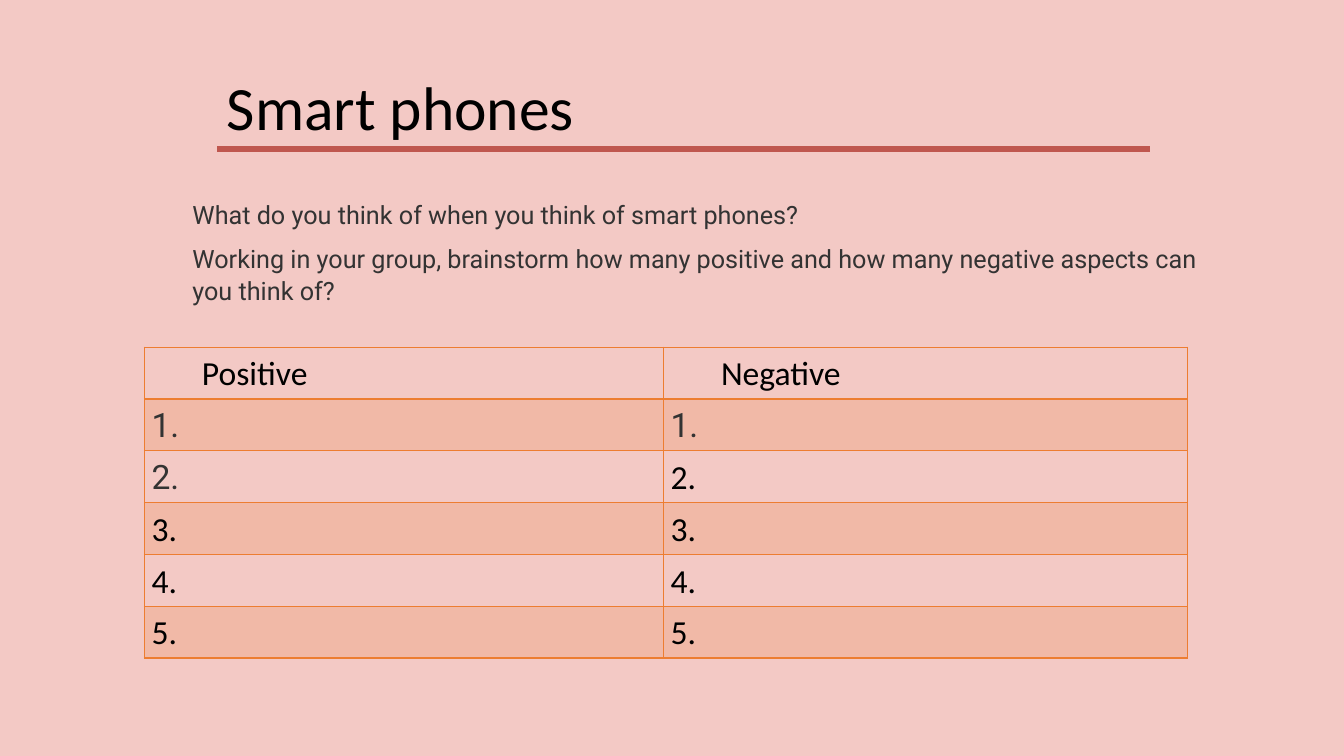
from lxml import etree
from pptx import Presentation
from pptx.dml.color import RGBColor
from pptx.enum.shapes import MSO_CONNECTOR
from pptx.enum.text import MSO_ANCHOR
from pptx.oxml.ns import qn
from pptx.util import Cm, Pt

LINE = MSO_CONNECTOR.STRAIGHT
MIDDLE = MSO_ANCHOR.MIDDLE
BLACK, GREY, ORANGE = "000000", "333333", "ED7D31"
PINK, RED = "F3C9C5", "BF574F"
SANS, BODY = "Calibri", "Roboto"


def color(code):
    return RGBColor.from_string(code)


def add_run(para, text, size, font, code):
    run = para.add_run()
    run.text = text
    run.font.size = Pt(size)
    run.font.name = font
    run.font.color.rgb = color(code)


def add_box(slide, left, top, width, height):
    box = slide.shapes.add_textbox(Cm(left), Cm(top), Cm(width), Cm(height))
    box.text_frame.word_wrap = True
    return box.text_frame


def add_title(slide, left, top, width, height):
    frame = add_box(slide, left, top, width, height)
    frame.vertical_anchor = MIDDLE
    para = frame.paragraphs[0]
    para.line_spacing = 0.9
    add_run(para, "Smart phones", 44, SANS, BLACK)

    # Rule under the title
    level = Cm(top + 2.81)
    rule = slide.shapes.add_connector(LINE, Cm(left), level,
                                      Cm(left + 23.5), level)
    rule.line.color.rgb = color(RED)
    rule.line.width = Pt(4.5)
    etree.SubElement(rule._element.spPr, qn("a:effectLst"))


def add_task(slide, left, top, width, height):
    frame = add_box(slide, left, top, width, height)
    texts = (
        "What do you think of when you think of smart phones?",
        "Working in your group, brainstorm how many positive and how many "
        "negative aspects can you think of?",
    )
    for i, text in enumerate(texts):
        para = frame.add_paragraph() if i else frame.paragraphs[0]
        para.line_spacing = 1.07
        para.space_after = Pt(8)
        add_run(para, text, 18, BODY, GREY)


def indent(para, left, first=0):
    props = para._p.get_or_add_pPr()
    props.set("marL", str(Cm(left)))
    props.set("indent", str(Cm(first)))
    return props


def add_edge(cell, side, width):
    props = cell._tc.get_or_add_tcPr()
    edge = etree.SubElement(props, qn("a:ln" + side), w=str(Pt(width)))
    fill = etree.SubElement(edge, qn("a:solidFill"))
    etree.SubElement(fill, qn("a:srgbClr"), val=ORANGE)


def fill_cell(cell, shaded):
    if not shaded:
        cell.fill.background()
        return
    cell.fill.solid()
    cell.fill.fore_color.rgb = color(ORANGE)
    tint = cell._tc.tcPr.find(qn("a:solidFill"))[0]
    etree.SubElement(tint, qn("a:alpha"), val="20000")


def add_grid(slide, left, top, width, height):
    heads = ("Positive", "Negative")
    count = 5
    grey = {(1, 0), (2, 0), (1, 1)}
    grid = slide.shapes.add_table(count + 1, len(heads), Cm(left), Cm(top),
                                  Cm(width), Cm(height)).table
    grid.first_row = grid.horz_banding = False
    first = 13.08
    for col, size in zip(grid.columns, (first, width - first)):
        col.width = Cm(size)

    for r, row in enumerate(grid.rows):
        row.height = Cm(height / (count + 1))
        for c, cell in enumerate(row.cells):
            cell.vertical_anchor = MIDDLE
            cell.margin_left = cell.margin_right = Cm(0.18)
            cell.margin_top = cell.margin_bottom = 0
            para = cell.text_frame.paragraphs[0]
            para.line_spacing = 1.07
            font, code = (BODY, GREY) if (r, c) in grey else (SANS, BLACK)
            if r == 0:
                indent(para, 1.27)
                add_run(para, heads[c], 24, font, code)
            else:
                # Numbered line left open; the space makes the number show
                props = indent(para, 1.27, -1.27)
                etree.SubElement(props, qn("a:buAutoNum"),
                                 type="arabicPeriod", startAt=str(r))
                add_run(para, " ", 24, font, code)

            # Borders, the heavier one under the heads
            for side in "LRTB":
                heavy = (r, side) in ((0, "B"), (1, "T"))
                add_edge(cell, side, 2 if heavy else 1)
            fill_cell(cell, r % 2 == 1)


def main():
    deck = Presentation()
    deck.slide_width, deck.slide_height = Cm(33.87), Cm(19.05)
    slide = deck.slides.add_slide(deck.slide_layouts[6])
    slide.background.fill.solid()
    slide.background.fill.fore_color.rgb = color(PINK)
    add_title(slide, 5.47, 0.94, 28.4, 3.68)
    add_task(slide, 4.6, 4.85, 26.29, 2.97)
    add_grid(slide, 3.64, 8.75, 26.29, 7.83)
    deck.save("out.pptx")


if __name__ == "__main__":
    main()
